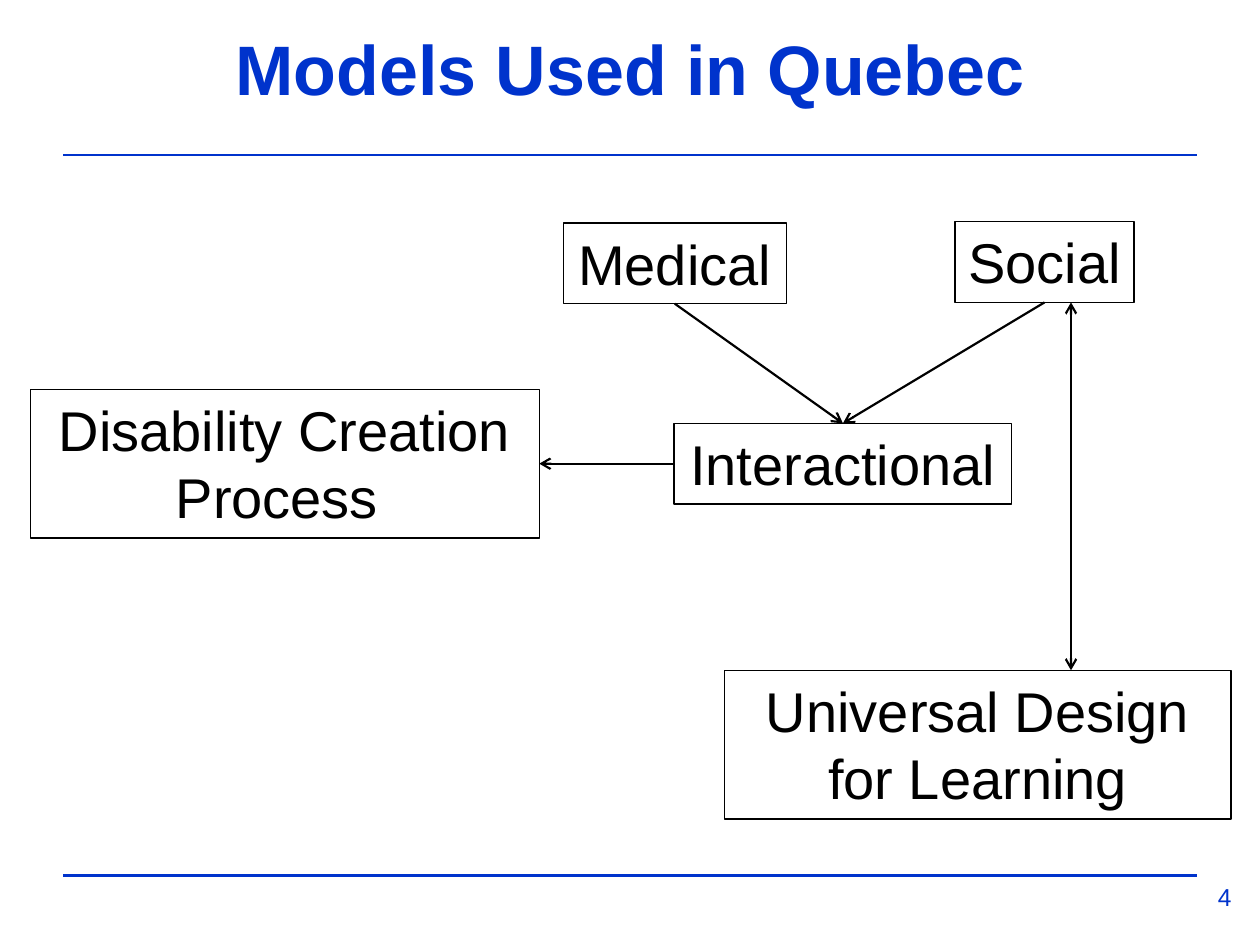
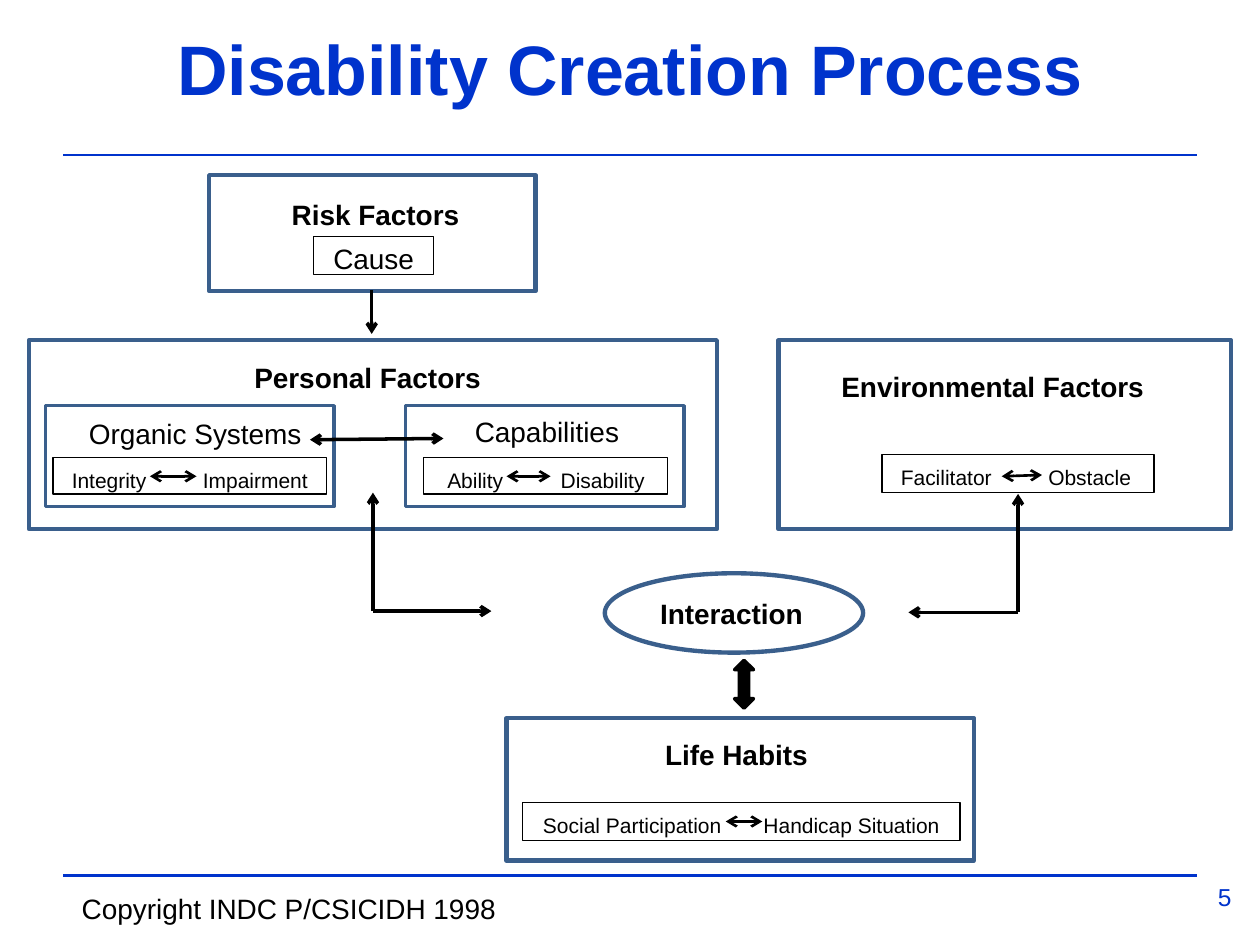
import lxml.etree
import pptx
import pptx.dml.color
import pptx.enum.shapes
import pptx.enum.text
import pptx.oxml.ns
import pptx.util

SHAPES = pptx.enum.shapes.MSO_SHAPE
ALIGN = pptx.enum.text.PP_ALIGN
ANCHOR = pptx.enum.text.MSO_ANCHOR
NO_AUTOFIT = pptx.enum.text.MSO_AUTO_SIZE.NONE

# Shared look
BLUE, FRAME, BLACK, WHITE = "0033CC", "3A5F8C", "000000", "FFFFFF"
FONT = "Arial"
COLUMNS, ROWS = 10, 7.5
SLIDE_WIDTH, SLIDE_HEIGHT = pptx.util.Inches(10), pptx.util.Inches(7.5)
TOP, LEFT, BOTTOM, RIGHT = range(4)  # connection sites of a rectangle
DIAGRAM_LABEL = {"line_spacing": 1.15, "space_after": pptx.util.Pt(10)}


def col(count):
    return round(SLIDE_WIDTH * count / COLUMNS)


def row(count):
    return round(SLIDE_HEIGHT * count / ROWS)


def place(left, top, width, height):
    return col(left), row(top), col(width), row(height)


def rgb(value):
    return pptx.dml.color.RGBColor.from_string(value)


def apply(target, formats):
    for name, value in formats.items():
        setattr(target, name, value)


def append_xml(parent, tag, **attributes):
    return lxml.etree.SubElement(parent, pptx.oxml.ns.qn(tag), attributes)


def write(shape, text, size, align=ALIGN.CENTER, anchor=ANCHOR.TOP,
          bold=False, color=BLACK, wrap=True, spacing=None):
    frame = shape.text_frame
    apply(frame, {"auto_size": NO_AUTOFIT, "word_wrap": wrap,
                  "vertical_anchor": anchor})
    paragraph = frame.paragraphs[0]
    apply(paragraph, {"alignment": align, **(spacing or {})})
    run = paragraph.add_run()
    run.text = text
    apply(run.font, {"name": FONT, "size": pptx.util.Pt(size), "bold": bold})
    run.font.color.rgb = rgb(color)
    return paragraph


# Element kinds
def box(slide, area, line=None, weight=0.75, fill=None, kind=SHAPES.RECTANGLE):
    shape = slide.shapes.add_shape(kind, *place(*area))
    shape.shadow.inherit = False
    if fill:
        shape.fill.solid()
        shape.fill.fore_color.rgb = rgb(fill)
    else:
        shape.fill.background()
    if line:
        shape.line.color.rgb = rgb(line)
        shape.line.width = pptx.util.Pt(weight)
    else:
        shape.line.fill.background()
    return shape


def line(slide, start, end, color=BLACK, weight=2, heads=()):
    connector = slide.shapes.add_connector(
        pptx.enum.shapes.MSO_CONNECTOR.STRAIGHT,
        col(start[0]), row(start[1]), col(end[0]), row(end[1]))
    connector.line.color.rgb = rgb(color)
    connector.line.width = pptx.util.Pt(weight)
    properties = connector.element.spPr
    outline = properties.find(pptx.oxml.ns.qn("a:ln"))
    for head in heads:
        append_xml(outline, f"a:{head}", type="arrow")
    append_xml(properties, "a:effectLst")
    return connector


def arrow(slide, start, end, weight=2):
    return line(slide, start, end, weight=weight, heads=["tailEnd"])


def double_arrow(slide, start, end, weight=2):
    return line(slide, start, end, weight=weight, heads=["headEnd", "tailEnd"])


def linked_arrow(slide, source, source_site, target, target_site):
    link = arrow(slide, (0, 0), (1, 1), weight=1.25)
    link.begin_connect(source, source_site)
    link.end_connect(target, target_site)


def model(slide, text, area):
    shape = box(slide, area, BLACK)
    write(shape, text, 32)
    return shape


def label(slide, text, area, bold=False, line_color=None, **options):
    shape = box(slide, area, line_color, fill=WHITE)
    write(shape, text, 16, bold=bold, spacing=DIAGRAM_LABEL, **options)


def opposites(slide, words, area, inset, second_word, link_start, link_end):
    """Two words in one box, the second at a tab stop, joined by an arrow."""
    shape = box(slide, area, BLACK, fill=WHITE)
    shape.text_frame.margin_left = col(inset)
    paragraph = write(shape, "\t".join(words), 12, ALIGN.LEFT,
                      wrap=False, spacing=DIAGRAM_LABEL)
    tabs = append_xml(paragraph._p.get_or_add_pPr(), "a:tabLst")
    append_xml(tabs, "a:tab", pos=str(col(second_word)), algn="l")
    double_arrow(slide, link_start, link_end, weight=1.5)


def new_slide(deck, title, number):
    slide = deck.slides.add_slide(deck.slide_layouts[5])
    heading = slide.shapes.title
    apply(heading, dict(zip(("left", "top", "width", "height"),
                            place(0.5, 0.17, 9, 0.75))))
    write(heading, title, 40, anchor=ANCHOR.BOTTOM, bold=True, color=BLUE)
    for rule_row in (1.23, 6.95):
        line(slide, (0.5, rule_row), (9.5, rule_row), BLUE, 1.5)
    page = slide.shapes.add_textbox(*place(9.44, 6.95, 0.56, 0.42))
    write(page, str(number), 14, color=BLUE)
    return slide


# Slides
def models_slide(deck):
    slide = new_slide(deck, "Models Used in Quebec", 4)
    interactional = model(slide, "Interactional", (5.35, 3.36, 2.68, 0.64))
    medical = model(slide, "Medical", (4.47, 1.77, 1.77, 0.64))
    social = model(slide, "Social", (7.58, 1.76, 1.42, 0.64))
    model(slide, "Universal Design for Learning", (5.75, 5.32, 4.02, 1.18))
    creation = model(slide, "Disability Creation Process ",
                     (0.24, 3.09, 4.04, 1.18))
    linked_arrow(slide, medical, BOTTOM, interactional, TOP)
    linked_arrow(slide, social, BOTTOM, interactional, TOP)
    linked_arrow(slide, interactional, LEFT, creation, RIGHT)
    double_arrow(slide, (8.5, 2.4), (8.5, 5.32), weight=1.25)


def process_slide(deck):
    slide = new_slide(deck, "Disability Creation Process", 5)
    credit = slide.shapes.add_textbox(*place(0.55, 7.03, 3.53, 0.37))
    write(credit, "Copyright INDC P/CSICIDH 1998", 16, ALIGN.LEFT, wrap=False)

    # Frames: risk, personal, environmental, life habits, then the inner pair
    for area in ((1.66, 1.39, 2.59, 0.92), (0.23, 2.7, 5.46, 1.5),
                 (6.18, 2.7, 3.59, 1.5), (4.02, 5.7, 3.71, 1.13)):
        box(slide, area, FRAME, 2.5)
    for area in ((0.36, 3.22, 2.29, 0.8), (3.22, 3.22, 2.21, 0.8)):
        box(slide, area, FRAME, 2)
    box(slide, (4.8, 4.55, 2.05, 0.63), FRAME, 2.5, kind=SHAPES.OVAL)

    # Headings
    middle = {"anchor": ANCHOR.MIDDLE}
    start = {"anchor": ANCHOR.MIDDLE, "align": ALIGN.LEFT}
    label(slide, "Risk Factors", (2.17, 1.52, 1.62, 0.32), True, **middle)
    label(slide, "Cause", (2.49, 1.88, 0.95, 0.3), line_color=BLACK, **middle)
    label(slide, "Personal Factors", (1.92, 2.77, 2.23, 0.36), True,
          align=ALIGN.LEFT)
    label(slide, "Organic Systems", (0.56, 3.27, 1.98, 0.29), **middle)
    label(slide, "Capabilities", (3.67, 3.25, 1.47, 0.31), **start)
    for text, area in (("Environmental Factors", (6.58, 2.88, 2.83, 0.34)),
                       ("Interaction", (5.14, 4.68, 1.45, 0.34)),
                       ("Life Habits", (5.18, 5.8, 1.43, 0.34))):
        label(slide, text, area, True, **start)

    # Opposites: words, area, inset, second word, link ends
    for pair in (
            (("Integrity", "Impairment"), (0.42, 3.63, 2.17, 0.29),
             0.15, 1.04, (1.19, 3.78), (1.56, 3.78)),
            (("Ability", "Disability"), (3.36, 3.63, 1.94, 0.29),
             0.19, 0.9, (4.02, 3.78), (4.37, 3.78)),
            (("Facilitator", "Obstacle"), (7, 3.61, 2.16, 0.3),
             0.15, 1.17, (7.95, 3.78), (8.27, 3.77)),
            (("Social Participation", "Handicap Situation"),
             (4.15, 6.37, 3.47, 0.3),
             0.16, 1.75, (5.76, 6.52), (6.05, 6.52))):
        opposites(slide, *pair)

    # Flow between the factors
    double_arrow(slide, (2.46, 3.49), (3.52, 3.48))
    arrow(slide, (2.95, 2.3), (2.95, 2.65))
    for corner, ends in (((2.96, 4.85), ((3.9, 4.85), (2.96, 3.91))),
                         ((8.08, 4.86), ((8.08, 3.92), (7.21, 4.86)))):
        for end in ends:
            arrow(slide, corner, end)
    box(slide, (5.83, 5.24, 0.15, 0.38), BLACK, 2, BLACK, SHAPES.UP_DOWN_ARROW)


def main():
    deck = pptx.Presentation()
    apply(deck, {"slide_width": SLIDE_WIDTH, "slide_height": SLIDE_HEIGHT})
    models_slide(deck)
    process_slide(deck)
    deck.save("out.pptx")


if __name__ == "__main__":
    main()
